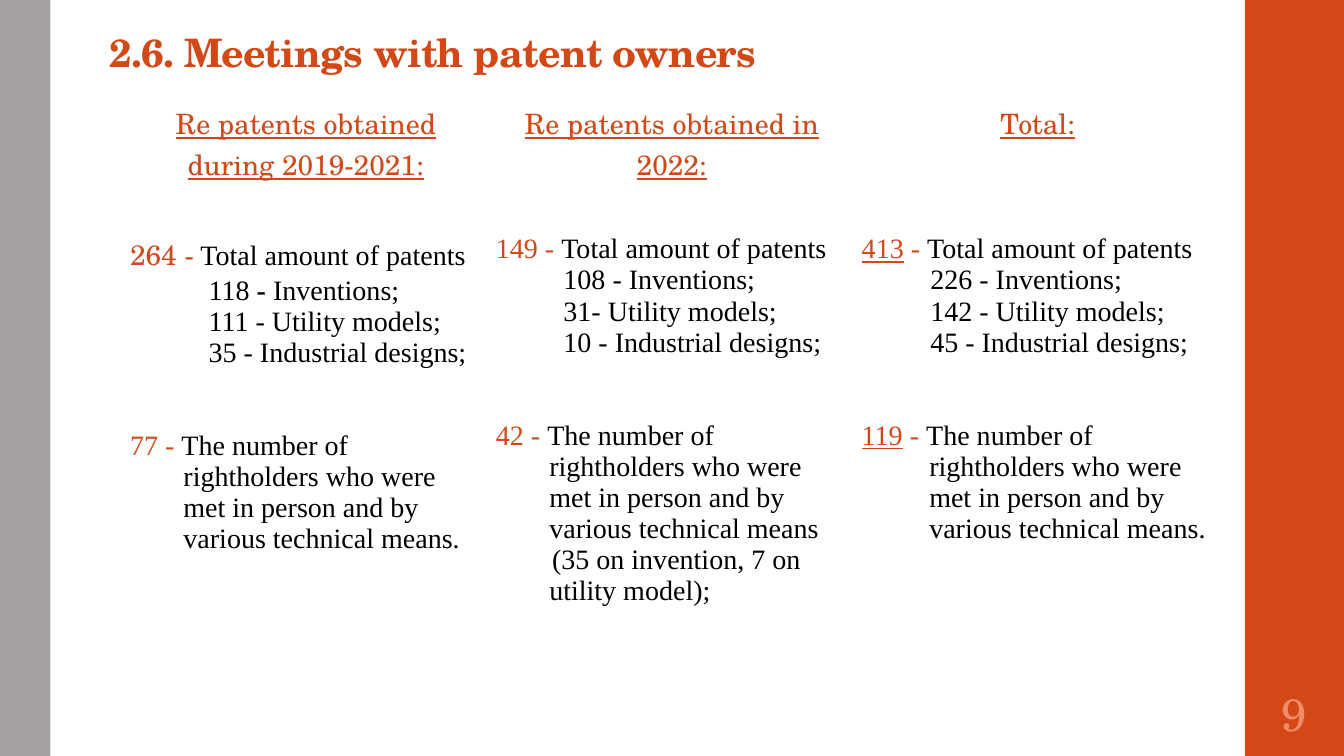
from dataclasses import dataclass

from pptx import Presentation
from pptx.dml.color import RGBColor as Rgb
from pptx.enum.shapes import MSO_SHAPE as Kind
from pptx.enum.text import MSO_ANCHOR as Anchor, PP_ALIGN as Align
from pptx.util import Emu, Inches, Pt

WIDE, HIGH = Inches(13.33), Inches(7.5)
COLS, ROWS = 40, 30
SERIF, TIMES = "TeX Gyre Schola", "Times New Roman"
INK = {"rust": "D34817", "gray": "A6A1A1", "pale": "EF8C6A", "black": "000000"}


@dataclass
class Piece:
    text: str
    ink: str = "black"
    font: str = TIMES
    size: float = 20
    bold: bool = False
    under: bool = False
    track: int = 0


@dataclass
class Line:
    """Pieces of one paragraph; left and first are indents in grid columns."""
    pieces: list[Piece]
    left: float = 0
    first: float = 0
    gap: float = 0
    align: Align = Align.LEFT
    pitch: float = 1


@dataclass
class Box:
    """A place on the grid, in columns and rows."""
    col: float
    row: float
    cols: float
    rows: float

    def place(self) -> tuple[Emu, Emu, Emu, Emu]:
        return across(self.col), down(self.row), across(self.cols), down(self.rows)


def across(cols: float) -> Emu:
    return Emu(round(WIDE * cols / COLS))


def down(rows: float) -> Emu:
    return Emu(round(HIGH * rows / ROWS))


def style(run, piece: Piece) -> None:
    font = run.font
    font.name, font.size = piece.font, Pt(piece.size)
    font.bold, font.underline = piece.bold, piece.under
    font.color.rgb = Rgb.from_string(INK[piece.ink])
    if piece.track:
        run._r.get_or_add_rPr().set("spc", str(piece.track))


def write(frame, lines: list[Line]) -> None:
    for i, line in enumerate(lines):
        para = frame.paragraphs[0] if i == 0 else frame.add_paragraph()
        para.text = line.pieces[0].text
        for piece in line.pieces[1:]:
            para.add_run().text = piece.text
        for run, piece in zip(para.runs, line.pieces):
            style(run, piece)
        para.alignment, para.line_spacing = line.align, line.pitch
        para.space_before = Pt(line.gap)
        props = para._p.get_or_add_pPr()
        props.set("marL", str(across(line.left)))
        props.set("indent", str(across(line.first)))


def add_bar(slide, box: Box, ink: str) -> None:
    bar = slide.shapes.add_shape(Kind.RECTANGLE, *box.place())
    bar.shadow.inherit = False
    bar.fill.solid()
    bar.fill.fore_color.rgb = Rgb.from_string(INK[ink])
    bar.line.fill.background()


def add_text(slide, box: Box, line: Line, anchor: Anchor, side: float, top: float) -> None:
    frame = slide.shapes.add_textbox(*box.place()).text_frame
    frame.word_wrap, frame.vertical_anchor = True, anchor
    frame.margin_left = frame.margin_right = across(side)
    frame.margin_top, frame.margin_bottom = down(top), down(0.2)
    write(frame, [line])


def add_grid(slide, box: Box, heights: list[float], rows: list[list[list[Line]]]) -> None:
    count = len(rows[0])
    table = slide.shapes.add_table(len(rows), count, *box.place()).table
    table.first_row = table.horz_banding = False
    for col in table.columns:
        col.width = across(box.cols / count)
    for r, height in enumerate(heights):
        table.rows[r].height = down(height)
        for c, lines in enumerate(rows[r]):
            cell = table.cell(r, c)
            cell.fill.background()
            cell.margin_left = cell.margin_right = across(0.21)
            cell.margin_top = cell.margin_bottom = 0
            write(cell.text_frame, lines)


def head(text: str) -> list[Line]:
    return [Line([Piece(text, "rust", SERIF, under=True)], align=Align.CENTER)]


def sums(mark: list[Piece], kinds: list[list[Piece]], left: float, first: float) -> list[Line]:
    """The total of patents, then its split by kind."""
    total = Line(mark + [Piece("Total amount of patents")])
    return [total] + [Line(kind, left, first) for kind in kinds]


def met(mark: list[Piece], hang: float, end: str) -> Line:
    """The count of rightholders, set apart from the sums above."""
    text = "The number of rightholders who were met in person and by various technical means"
    return Line(mark + [Piece(text + end)], hang, -hang, gap=44.5)


def rust(text: str, font: str = TIMES) -> list[Piece]:
    return [Piece(text, "rust", font)]


def lined(text: str) -> list[Piece]:
    return [Piece(text, "rust", under=True)] + rust(" - ")


HEADS = [head(text) for text in (
    "Re patents obtained during 2019-2021:", "Re patents obtained in 2022:", "Total:")]

PAST = sums(rust("264 -", SERIF) + [Piece(" ")], [
    [Piece("118"), Piece(" - ", bold=True), Piece("Inventions;")],
    [Piece("111 - Utility models;")],
    [Piece("35 - Industrial designs;")],
], 2.37, -0.03) + [met(rust("77 - "), 1.59, ".")]

YEAR = sums(rust("149 - "), [
    [Piece("108 - Inventions;")],
    [Piece("31- Utility models;")],
    [Piece("10 - Industrial designs;")],
], 2.04, -0.03) + [
    met(rust("42 - "), 1.59, ""),
    Line([Piece("(35 on invention, 7 on utility model);")], 1.59, 0.08),
]

BOTH = sums(lined("413"), [
    [Piece("226 - Inventions;")],
    [Piece("142 - Utility models;")],
    [Piece("45 - Industrial designs;")],
], 2.04, 0) + [met(lined("119"), 2.01, ".")]


def main() -> None:
    deck = Presentation()
    deck.slide_width, deck.slide_height = WIDE, HIGH
    slide = deck.slides.add_slide(deck.slide_layouts[6])
    add_bar(slide, Box(37.05, 0, 2.95, ROWS), "rust")
    add_bar(slide, Box(0, 0, 1.5, ROWS), "gray")
    title = Piece("2.6. Meetings with patent owners", "rust", SERIF, 28, bold=True, track=-50)
    add_text(slide, Box(2.97, 1, 31.8, 2.2), Line([title], pitch=0.9), Anchor.BOTTOM, 0.3, 0.12)
    page = Line([Piece("9", "pale", SERIF, 32.4)], align=Align.CENTER)
    add_text(slide, Box(37.05, 27, 2.95, 2.6), page, Anchor.MIDDLE, 0.15, 0.2)
    heights = [5.2, 19.04]
    add_grid(slide, Box(3.66, 4.08, 32.67, sum(heights)), heights, [HEADS, [PAST, YEAR, BOTH]])
    deck.save("out.pptx")


if __name__ == "__main__":
    main()
